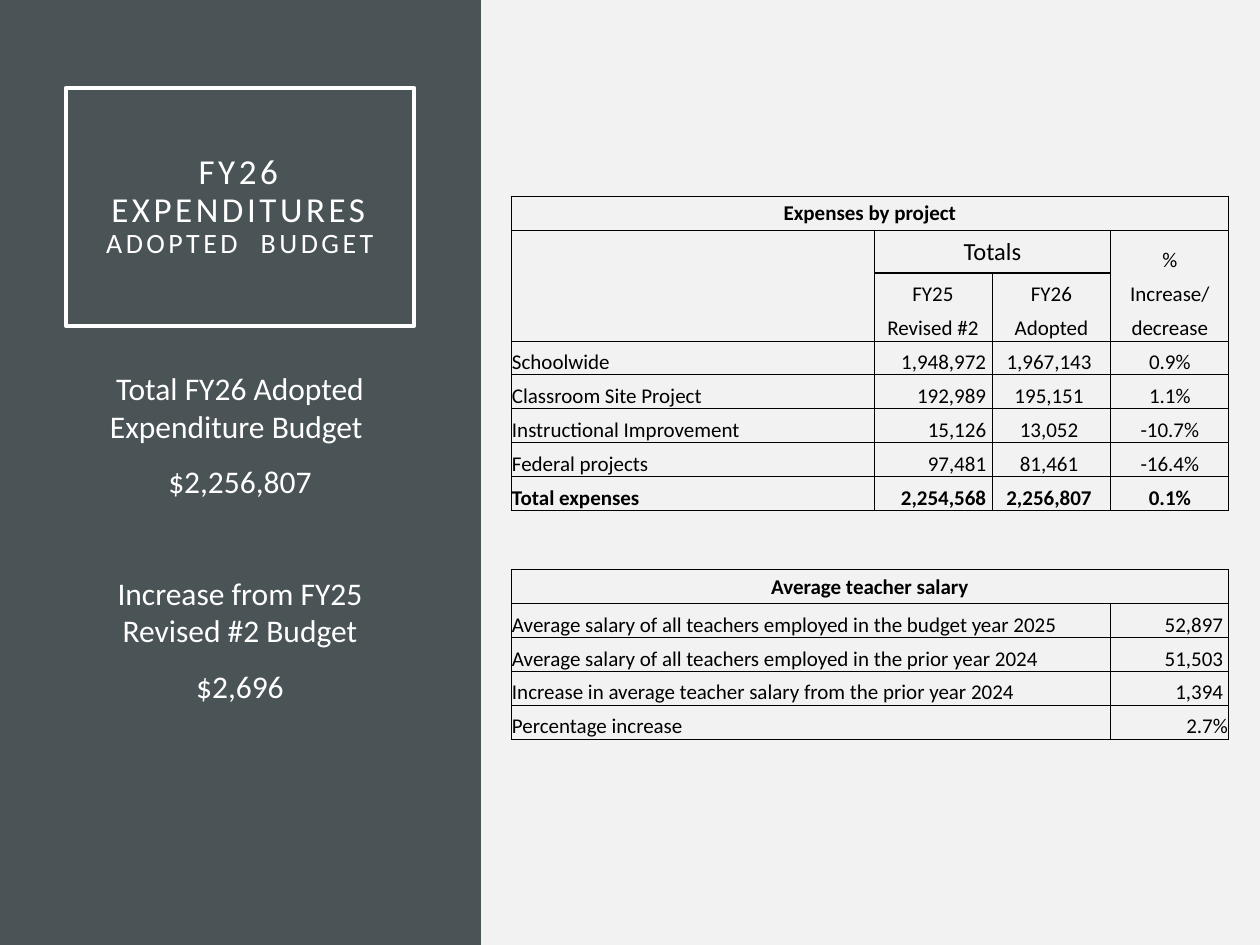
from lxml import etree
from pptx import Presentation
from pptx.dml.color import RGBColor
from pptx.enum.shapes import MSO_SHAPE
from pptx.enum.text import MSO_ANCHOR, PP_ALIGN
from pptx.oxml.ns import qn
from pptx.util import Emu, Pt

RECTANGLE = MSO_SHAPE.RECTANGLE
LEFT, CENTER, RIGHT = PP_ALIGN.LEFT, PP_ALIGN.CENTER, PP_ALIGN.RIGHT
MIDDLE, BOTTOM = MSO_ANCHOR.MIDDLE, MSO_ANCHOR.BOTTOM
SLATE = RGBColor(0x4A, 0x53, 0x56)
PALE = RGBColor(0xF2, 0xF2, 0xF2)
WHITE = RGBColor(0xFF, 0xFF, 0xFF)
BLACK = RGBColor(0, 0, 0)
NO_STYLE = "{2D5ABB26-0587-4C30-8999-92F81FD0307C}"


def px(length):
    return Emu(round(length * 914400 / 126))


def add_text(paragraph, text, size, color, bold=False):
    run = paragraph.add_run()
    run.text = text
    formats = {"name": "Calibri", "size": Pt(size), "bold": bold}
    for name, value in formats.items():
        setattr(run.font, name, value)
    run.font.color.rgb = color
    return run


presentation = Presentation()
presentation.slide_width, presentation.slide_height = px(1260), px(945)
slide = presentation.slides.add_slide(presentation.slide_layouts[6])
slide.background.fill.solid()
slide.background.fill.fore_color.rgb = PALE

sidebar = slide.shapes.add_shape(RECTANGLE, 0, 0, px(481), px(945))
sidebar.shadow.inherit = False
sidebar.fill.solid()
sidebar.fill.fore_color.rgb = SLATE
sidebar.line.fill.background()

title = slide.shapes.add_shape(RECTANGLE, px(66), px(88), px(348), px(238))
title.shadow.inherit = False
title.fill.background()
title.line.color.rgb = WHITE
title.line.width = Pt(2.5)
title_format = {"word_wrap": True, "vertical_anchor": MIDDLE}
for side in ("left", "right", "top", "bottom"):
    title_format[f"margin_{side}"] = px(25)
for name, value in title_format.items():
    setattr(title.text_frame, name, value)
paragraph = title.text_frame.paragraphs[0]
paragraph.alignment = CENTER
paragraph.line_spacing = 0.9
heading = add_text(paragraph, "FY26 EXPENDITURES", 20, WHITE)
paragraph.add_line_break()
subheading = add_text(paragraph, "ADOPTED  BUDGET", 16, WHITE)
for run in (heading, subheading):
    run.font._element.set("spc", "200")

summary = slide.shapes.add_textbox(px(66), px(363), px(348), px(471))
summary.text_frame.word_wrap = True
summary_lines = [
    ("Total FY26 Adopted Expenditure Budget ", 0),
    ("$2,256,807", 10),
    ("Increase from FY25 Revised #2 Budget", 42),
    ("$2,696", 10),
]
for index, (text, space) in enumerate(summary_lines):
    frame = summary.text_frame
    paragraph = frame.add_paragraph() if index else frame.paragraphs[0]
    paragraph.alignment = CENTER
    paragraph.space_before = Pt(space)
    add_text(paragraph, text, 18, WHITE)

rows = [
    ["Expenses by project", "", "", "", ""],
    ["", "", "Totals", "", "%"],
    ["", "", "FY25", "FY26", "Increase/"],
    ["", "", "Revised #2", "Adopted", "decrease"],
    ["Schoolwide", "", "1,948,972 ", "1,967,143 ", "0.9%"],
    ["Classroom Site Project", "", "192,989 ", "195,151 ", "1.1%"],
    ["Instructional Improvement", "", "15,126 ", "13,052 ", "-10.7%"],
    ["Federal projects", "", "97,481 ", "81,461 ", "-16.4%"],
    ["Total expenses", "", "2,254,568 ", "2,256,807 ", "0.1%"],
    ["", "", "", "", ""],
    ["", "", "", "", ""],
    ["Average teacher salary", "", "", "", ""],
    ["Average salary of all teachers employed in the budget year 2025", "", "", "", "52,897 "],
    ["Average salary of all teachers employed in the prior year 2024", "", "", "", "51,503 "],
    ["Increase in average teacher salary from the prior year 2024", "", "", "", "1,394 "],
    ["Percentage increase", "", "", "", "2.7%"],
]
TITLE_ROWS, BOLD_ROWS, GAP_ROWS = (0, 11), (0, 8, 11), (9, 10)
column_widths = [265, 98, 118, 119, 118]
row_heights = [34] * len(rows)
row_heights[1] = 43
for gap_row in GAP_ROWS:
    row_heights[gap_row] = 29.5

table_frame = slide.shapes.add_table(
    len(rows), 5, px(511), px(196), px(sum(column_widths)), px(sum(row_heights)))
table = table_frame.table
table.first_row = table.horz_banding = False
table._tbl.tblPr.find(qn("a:tableStyleId")).text = NO_STYLE
for column, width in zip(table.columns, column_widths):
    column.width = px(width)
for row, height in zip(table.rows, row_heights):
    row.height = px(height)

cell_format = {"margin_left": px(1), "margin_right": px(1), "margin_top": px(1), "margin_bottom": 0}
for r, texts in enumerate(rows):
    for c, text in enumerate(texts):
        cell = table.cell(r, c)
        for name, value in cell_format.items():
            setattr(cell, name, value)
        centered = r in TITLE_ROWS or text == "Totals"
        cell.vertical_anchor = MIDDLE if centered else BOTTOM
        paragraph = cell.text_frame.paragraphs[0]
        if centered or (r < 11 and c > 2) or (r < 4 and c == 2):
            paragraph.alignment = CENTER
        else:
            paragraph.alignment = LEFT if c == 0 else RIGHT
        if text:
            add_text(paragraph, text, 14 if text == "Totals" else 12, BLACK, r in BOLD_ROWS)
        else:
            etree.SubElement(paragraph._p, qn("a:endParaRPr"), sz="1200")

        sides = set("LRTB")
        if r in GAP_ROWS:
            sides = {"T"} if r == 9 else {"B"}
        elif 1 <= r <= 8 and c < 2:
            sides.discard("R" if c == 0 else "L")
        if r == 2 or (r == 1 and c in (0, 1, 4)):
            sides.discard("B")
        if r == 3 or (r == 2 and c in (0, 1, 4)):
            sides.discard("T")
        properties = cell._tc.get_or_add_tcPr()
        for side in "LRTB":
            heavy = c in (2, 3) and (r, side) in ((1, "B"), (2, "T"))
            border = etree.SubElement(
                properties, qn(f"a:ln{side}"), w=str(Pt(0.75 if heavy else 0.5)))
            if side in sides:
                fill = etree.SubElement(border, qn("a:solidFill"))
                etree.SubElement(fill, qn("a:srgbClr"), val=str(BLACK))
            else:
                etree.SubElement(border, qn("a:noFill"))
        cell.fill.background()

merges = [(0, 0, 4), (1, 2, 3), (11, 0, 4)] + [(r, 0, 3) for r in range(12, 16)]
for r, first, last in merges:
    table.cell(r, first).merge(table.cell(r, last))

presentation.save("out.pptx")
